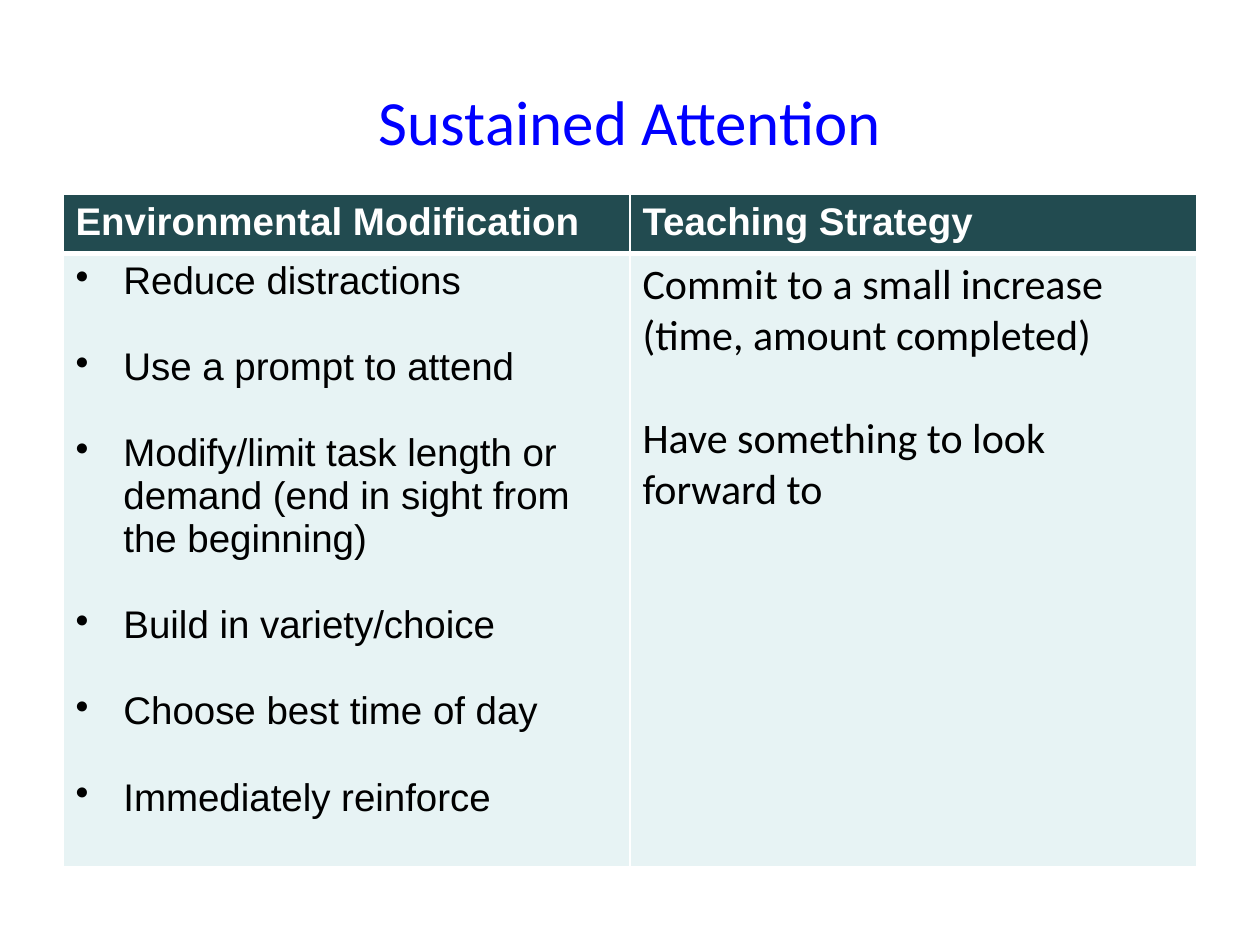
from lxml import etree
from pptx import Presentation, util as u
from pptx.dml.color import RGBColor
from pptx.enum import text
from pptx.oxml import ns

WHITE, BLACK, BLUE = "FFFFFF", "000000", "0000FF"
TEAL, PALE = "224B50", "E7F3F4"


def paint(obj, hue):
    """Give a font or a fill one solid colour."""
    fill = getattr(obj, "fill", obj)
    fill.solid()
    fill.fore_color.rgb = RGBColor.from_string(hue)


def write(frame, lines, face, size, hue, bold=False, gap=0):
    """Fill a text frame with paragraphs of one style."""
    frame.text = "\n".join(lines)
    for i, para in enumerate(frame.paragraphs):
        para.font.name = face
        para.font.size = u.Pt(size)
        para.font.bold = bold
        paint(para.font, hue)
        para.space_before = u.Pt(gap if i else 0)


deck = Presentation()
deck.slide_width, deck.slide_height = u.Inches(10), u.Inches(7.5)
slide = deck.slides.add_slide(deck.slide_layouts[6])

# Title
title = slide.shapes.add_textbox(
    u.Inches(0.75), u.Inches(0.44), u.Inches(8.5), u.Inches(1.03)).text_frame
title.word_wrap = True
title.vertical_anchor = text.MSO_ANCHOR.MIDDLE
write(title, ["Sustained Attention"], "Calibri", 36, BLUE)
title.paragraphs[0].alignment = text.PP_ALIGN.CENTER

# Table
table = slide.shapes.add_table(
    2, 2, u.Inches(0.5), u.Inches(1.54), u.Inches(9), u.Inches(5.34)).table
table.horz_banding = False
table.rows[0].height = u.Inches(0.47)
table.rows[1].height = u.Inches(4.87)

# White borders, thicker under the header, then the fills
for r, hue in enumerate([TEAL, PALE]):
    for cell in table.rows[r].cells:
        props = cell._tc.get_or_add_tcPr()
        for side in "LRTB":
            wide = 3 if side == "BT"[r] else 1
            line = etree.SubElement(props, ns.qn("a:ln" + side), w=str(u.Pt(wide)))
            solid = etree.SubElement(line, ns.qn("a:solidFill"))
            etree.SubElement(solid, ns.qn("a:srgbClr"), val=WHITE)
        paint(cell, hue)

# Header row
for c, head in enumerate(["Environmental Modification", "Teaching Strategy"]):
    write(table.cell(0, c).text_frame, [head], "Arial", 22, WHITE, bold=True)

# Bulleted changes to the setting
left = table.cell(1, 0).text_frame
write(left, [
    "Reduce distractions",
    "Use a prompt to attend",
    "Modify/limit task length or demand (end in sight from the beginning)",
    "Build in variety/choice",
    "Choose best time of day",
    "Immediately reinforce",
], "Arial", 22, BLACK, gap=24.6)
dent = u.Inches(0.38)
for para in left.paragraphs:
    props = para._p.get_or_add_pPr()
    props.set("marL", str(dent))
    props.set("indent", str(-dent))
    mark = etree.Element(ns.qn("a:buChar"), char="•")
    props.find(ns.qn("a:defRPr")).addprevious(mark)

# Teaching strategies
write(table.cell(1, 1).text_frame, [
    "Commit to a small increase (time, amount completed)",
    "Have something to look forward to",
], "Calibri", 24, BLACK, gap=29.3)

deck.save("out.pptx")
